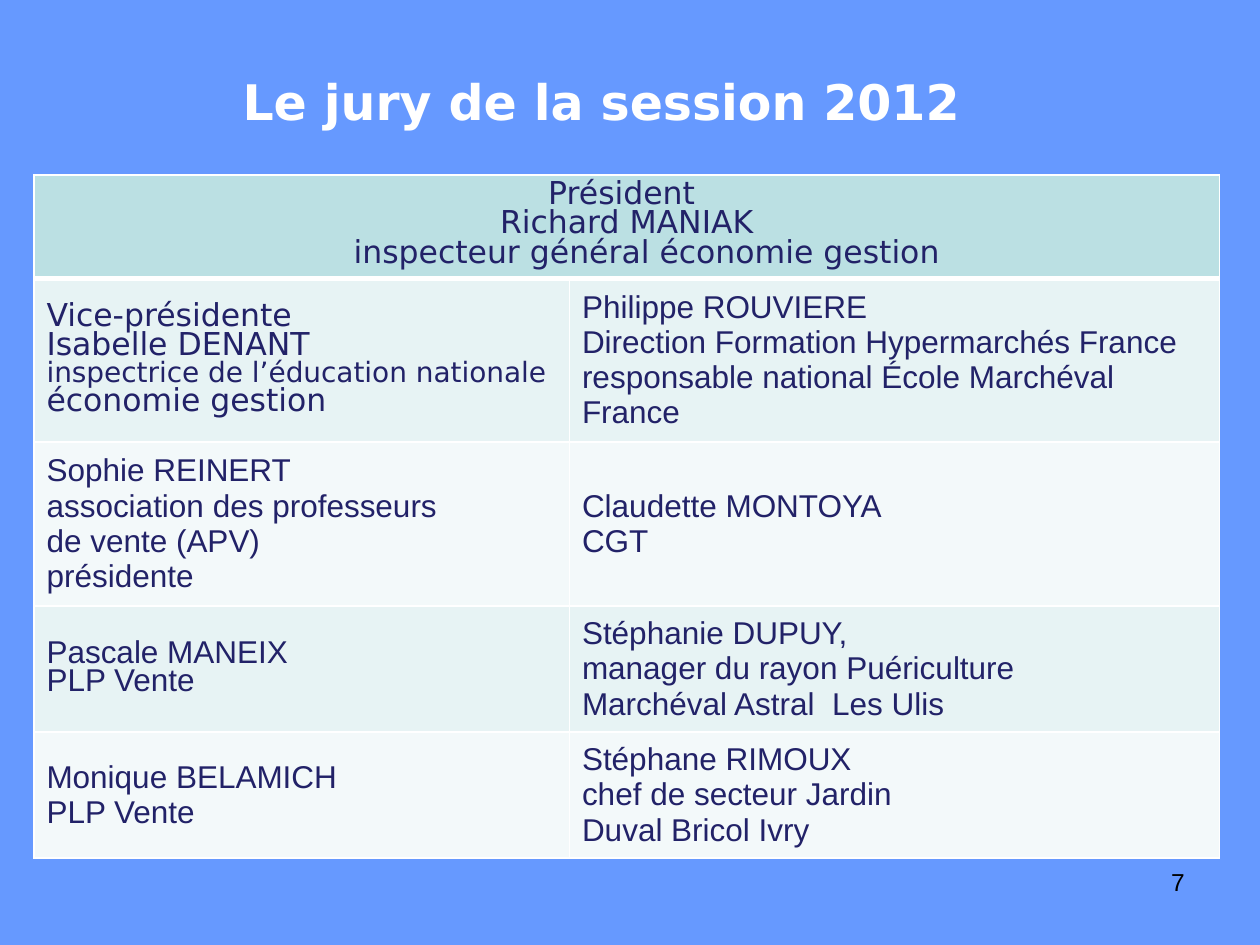
"""Build the slide that lists the members of the 2012 session jury."""
import lxml.etree
import pptx
import pptx.dml.color
import pptx.enum.text
import pptx.oxml.ns
import pptx.util

Pt = pptx.util.Pt
ALIGN = pptx.enum.text.PP_ALIGN
ANCHOR = pptx.enum.text.MSO_ANCHOR
COLORS = {
    "background": "6699FF", "white": "FFFFFF", "black": "000000", "text": "222268",
    "header": "BBE0E3", "odd_row": "E7F3F4", "even_row": "F3F9FA",
}
WIDE_FONT, PLAIN_FONT = "DejaVu Sans", "Arial"


def format_font(font, color, **values):
    font.color.rgb = pptx.dml.color.RGBColor.from_string(COLORS[color])
    for name, value in values.items():
        setattr(font, name, value)


def add_border(cell, side, width, position):
    tag = pptx.oxml.ns.qn
    line = lxml.etree.Element(tag(f"a:ln{side}"), w=str(int(Pt(width))))
    fill = lxml.etree.SubElement(line, tag("a:solidFill"))
    lxml.etree.SubElement(fill, tag("a:srgbClr"), val=COLORS["white"])
    cell._tc.get_or_add_tcPr().insert(position, line)


presentation = pptx.Presentation()
presentation.slide_width, presentation.slide_height = Pt(720), Pt(540)
slide = presentation.slides.add_slide(presentation.slide_layouts[5])
slide.background.fill.solid()
slide.background.fill.fore_color.rgb = pptx.dml.color.RGBColor.from_string(COLORS["background"])

title = slide.shapes.title
title_format = {"left": Pt(19.4), "top": Pt(37.4), "width": Pt(658), "height": Pt(41)}
for name, value in title_format.items():
    setattr(title, name, value)
title.text_frame.text = "Le jury de la session 2012 "
title.text_frame.vertical_anchor = ANCHOR.MIDDLE
title.text_frame.auto_size = pptx.enum.text.MSO_AUTO_SIZE.NONE
title_paragraph = title.text_frame.paragraphs[0]
title_paragraph.alignment = ALIGN.CENTER
format_font(title_paragraph.runs[0].font, "white", name=WIDE_FONT, size=Pt(28), bold=True)

jury = [
    [(WIDE_FONT, 0.8, ["Président ", "Richard MANIAK", "inspecteur général économie gestion"])],
    [(WIDE_FONT, 0.8, ["Vice-présidente", "Isabelle DENANT\vinspectrice de l’éducation nationale",
                       "économie gestion"]),
     (PLAIN_FONT, 1.0, ["Philippe ROUVIERE", "Direction Formation Hypermarchés France",
                        "responsable national École Marchéval France"])],
    [(PLAIN_FONT, 1.0, ["Sophie REINERT", "association des professeurs", "de vente (APV)",
                        "présidente"]),
     (PLAIN_FONT, 1.0, ["Claudette MONTOYA", "CGT"])],
    [(PLAIN_FONT, 0.8, ["Pascale MANEIX", "PLP Vente"]),
     (PLAIN_FONT, 1.0, ["Stéphanie DUPUY,", "manager du rayon Puériculture",
                        "Marchéval Astral  Les Ulis"])],
    [(PLAIN_FONT, 1.0, ["Monique BELAMICH", "PLP Vente"]),
     (PLAIN_FONT, 1.0, ["Stéphane RIMOUX", "chef de secteur Jardin", "Duval Bricol Ivry"])],
]
column_widths = [306, 371.5]
row_heights = [59, 93.6, 93.6, 72, 72]
table = slide.shapes.add_table(
    len(row_heights), len(column_widths), Pt(19.4), Pt(100),
    Pt(sum(column_widths)), Pt(sum(row_heights))).table
table.first_row = table.horz_banding = False
for column, width in zip(table.columns, column_widths):
    column.width = Pt(width)
for row, height in zip(table.rows, row_heights):
    row.height = Pt(height)
table.cell(0, 0).merge(table.cell(0, 1))

for row_index, row in enumerate(table.rows):
    fill_name = "header" if row_index == 0 else ("even_row", "odd_row")[row_index % 2]
    top_width = 3 if row_index == 1 else 1
    bottom_width = 3 if row_index == 0 else 1
    for cell in row.cells:
        cell.fill.solid()
        cell.fill.fore_color.rgb = pptx.dml.color.RGBColor.from_string(COLORS[fill_name])
        cell.vertical_anchor = ANCHOR.MIDDLE if row_index else ANCHOR.TOP
        cell.margin_left = cell.margin_right = Pt(7.2)
        cell.margin_top = cell.margin_bottom = Pt(3.6)
        borders = {"L": 1, "R": 1, "T": top_width, "B": bottom_width}
        for position, (side, width) in enumerate(borders.items()):
            add_border(cell, side, width, position)
    for cell, (font_name, spacing, lines) in zip(row.cells, jury[row_index]):
        for line_index, line in enumerate(lines):
            frame = cell.text_frame
            paragraph = frame.add_paragraph() if line_index else frame.paragraphs[0]
            paragraph.line_spacing = spacing
            paragraph.alignment = ALIGN.LEFT if row_index else ALIGN.CENTER
            for part_index, part in enumerate(line.split("\v")):
                if part_index:
                    paragraph.add_line_break()
                run = paragraph.add_run()
                run.text = part
                format_font(run.font, "text", name=font_name, size=Pt(16 if part_index else 18))
president_role = table.cell(0, 0).text_frame.paragraphs[-1]
president_role._p.get_or_add_pPr().set("marL", str(int(Pt(23))))

number_box = slide.shapes.add_textbox(Pt(516), Pt(492), Pt(168), Pt(37.5))
number_box.text_frame.word_wrap = True
number_paragraph = number_box.text_frame.paragraphs[0]
number_paragraph.text = "7"
number_paragraph.alignment = ALIGN.RIGHT
format_font(number_paragraph.runs[0].font, "black", name=PLAIN_FONT, size=Pt(14))

presentation.save("out.pptx")
